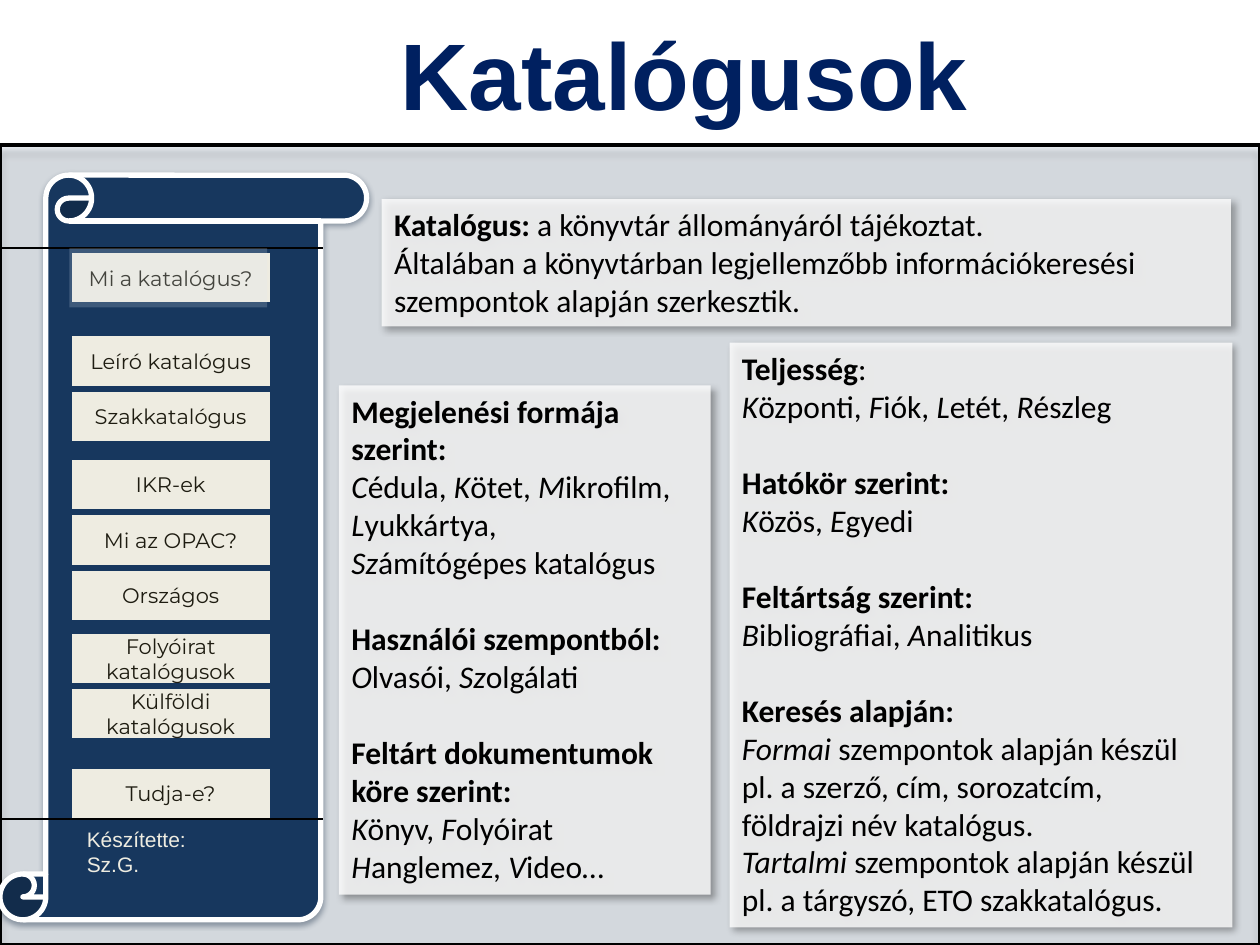
import pptx
import pptx.dml.color
import pptx.enum.dml
import pptx.enum.shapes
import pptx.enum.text
import pptx.oxml
import pptx.oxml.ns
import pptx.util
from lxml import etree

RGB = pptx.dml.color.RGBColor
SHAPE = pptx.enum.shapes.MSO_SHAPE
ALIGN = pptx.enum.text.PP_ALIGN
FIT = pptx.enum.text.MSO_AUTO_SIZE.SHAPE_TO_FIT_TEXT
Inches, Pt, qn = pptx.util.Inches, pptx.util.Pt, pptx.oxml.ns.qn

BLACK = RGB(0x00, 0x00, 0x00)
WHITE = RGB(0xFF, 0xFF, 0xFF)
OFF_WHITE = RGB(0xFE, 0xFE, 0xFE)
PALE_BLUE = RGB(0xDC, 0xE6, 0xF2)
TITLE_BLUE = RGB(0x00, 0x20, 0x60)
SCROLL_BLUE = RGB(0x17, 0x37, 0x5E)
SCROLL_SHADOW = RGB(0x0F, 0x24, 0x3E)
CREAM = RGB(0xEE, 0xEC, 0xE1)
MENU_INK = RGB(0x1E, 0x1C, 0x11)

TITLE = "Katalógusok"
AUTHOR = ["Készítette:", "Sz.G."]

# Menu groups: top of the first button, labels
MENU = [
    (2.01, ["Mi a katalógus?"]),
    (2.67, ["Leíró katalógus", "Szakkatalógus"]),
    (3.65, ["IKR-ek", "Mi az OPAC?", "Országos"]),
    (5.03, ["Folyóirat katalógusok", "Külföldi katalógusok"]),
    (6.10, ["Tudja-e?"]),
]
MENU_LEFT, MENU_STEP, BUTTON_W, BUTTON_H = 0.57, 0.44, 1.57, 0.39
RULES = [1.97, 6.5]
RULE_END = 2.56

# Panels: position, then sections of paragraphs; *bold*, _italic_
PANELS = [
    ((2.69, 3.06, 2.95, 4.04), [
        ["*Megjelenési formája*", "*szerint:*",
         "_C_édula, _K_ötet, _M_ikrofilm,", "_L_yukkártya,",
         "_Sz_ámítógépes katalógus"],
        ["*Használói szempontból:*", "_O_lvasói, _Sz_olgálati"],
        ["*Feltárt dokumentumok*", "*köre szerint:*",
         "_K_önyv, _F_olyóirat", "_H_anglemez, _V_ideo…"],
    ]),
    ((5.79, 2.72, 3.99, 4.64), [
        ["*Teljesség*:", "_K_özponti, _F_iók, _L_etét, _R_észleg"],
        ["*Hatókör szerint:*", "_K_özös, _E_gyedi"],
        ["*Feltártság szerint:*", "_B_ibliográfiai, _A_nalitikus"],
        ["*Keresés alapján:*",
         "_Formai _szempontok alapján készül",
         "pl. a szerző, cím, sorozatcím, \vföldrajzi név katalógus.",
         "_Tartalmi _szempontok alapján készül",
         "pl. a tárgyszó, ETO szakkatalógus."],
    ]),
    ((3.03, 1.58, 6.74, 1.01), [
        ["*Katalógus: *a könyvtár állományáról tájékoztat.",
         "Általában a könyvtárban legjellemzőbb információkeresési "
         "szempontok alapján szerkesztik."],
    ]),
]
SECTION_GAP = Pt(22)


def add_effects(shape, shadow=None):
    """Write the effect list; shadow is colour, opacity %, blur, distance, angle."""
    effects = etree.SubElement(shape._element.spPr, qn("a:effectLst"))
    if shadow:
        color, opacity, blur, distance, angle = shadow
        outer = etree.SubElement(
            effects, qn("a:outerShdw"), blurRad=str(Pt(blur)), dist=str(Pt(distance)),
            dir=str(angle * 60000), algn="tl", rotWithShape="0")
        tint = etree.SubElement(outer, qn("a:srgbClr"), val=str(color))
        etree.SubElement(tint, qn("a:alpha"), val=str(opacity * 1000))


def add_block(slide, kind, place, color, opacity=100, line=None, shadow=None):
    block = slide.shapes.add_shape(kind, *map(Inches, place))
    block.fill.solid()
    block.fill.fore_color.rgb = color
    if opacity < 100:
        tint = block._element.spPr.find(qn("a:solidFill"))[0]
        etree.SubElement(tint, qn("a:alpha"), val=str(opacity * 1000))
    if line:
        block.line.color.rgb, block.line.width = line
    else:
        block.line.fill.background()
    add_effects(block, shadow)
    return block


def style(font, name, size, color, bold=False, italic=False):
    font.name, font.size, font.bold, font.italic = name, Pt(size), bold, italic
    font.color.rgb = color


def outline(run, color, width):
    edge = etree.Element(qn("a:ln"), w=str(Pt(width)))
    fill = etree.SubElement(edge, qn("a:solidFill"))
    etree.SubElement(fill, qn("a:srgbClr"), val=str(color))
    run.font._element.insert(0, edge)


def add_outlined_text(slide, place, lines, size, color, edge, bold, align, wrap):
    frame = slide.shapes.add_textbox(*map(Inches, place)).text_frame
    frame.word_wrap = wrap
    frame.auto_size = FIT
    frame.text = "\n".join(lines)
    for paragraph in frame.paragraphs:
        paragraph.alignment = align
        for run in paragraph.runs:
            style(run.font, "Arial", size, color, bold)
            outline(run, *edge)


def write_marked(paragraph, text):
    """Turn *bold* and _italic_ marks into runs, and \\v into a line break."""
    for b, chunk in enumerate(text.split("*")):
        for i, piece in enumerate(chunk.split("_")):
            for n, part in enumerate(piece.split("\v")):
                if n:
                    paragraph.add_line_break()
                if part:
                    run = paragraph.add_run()
                    run.text = part
                    style(run.font, "Calibri", 18, BLACK, b % 2 == 1, i % 2 == 1)


def add_panel(slide, place, sections):
    panel = add_block(slide, SHAPE.RECTANGLE, place, WHITE, 80,
                      shadow=(BLACK, 40, 4, 3, 45))
    frame = panel.text_frame
    frame.word_wrap = True
    frame.auto_size = FIT
    frame.vertical_anchor = pptx.enum.text.MSO_ANCHOR.TOP
    for s, section in enumerate(sections):
        for n, text in enumerate(section):
            first = s == n == 0
            paragraph = frame.paragraphs[0] if first else frame.add_paragraph()
            paragraph.alignment = ALIGN.LEFT
            if s and not n:
                paragraph.space_before = SECTION_GAP
            write_marked(paragraph, text)


def add_button(slide, top, label):
    button = add_block(slide, SHAPE.ACTION_BUTTON_CUSTOM,
                       (MENU_LEFT, top, BUTTON_W, BUTTON_H), CREAM)
    frame = button.text_frame
    frame.word_wrap = True
    frame.vertical_anchor = pptx.enum.text.MSO_ANCHOR.MIDDLE
    frame.text = label
    frame.paragraphs[0].alignment = ALIGN.CENTER
    style(frame.paragraphs[0].runs[0].font, "Montserrat", 12, MENU_INK)


def main():
    deck = pptx.Presentation()
    deck.slide_width, deck.slide_height = Inches(10), Inches(7.5)
    slide = deck.slides.add_slide(deck.slide_layouts[6])

    add_block(slide, SHAPE.RECTANGLE, (0, 1.15, 10, 6.35), PALE_BLUE, 42,
              (BLACK, Pt(2)), (BLACK, 46, 4, 4, 90))
    add_outlined_text(slide, (2.03, 0.08, 6.8, 1.01), [TITLE], 54, TITLE_BLUE,
                      (OFF_WHITE, 1.5), True, ALIGN.CENTER, True)
    add_block(slide, SHAPE.VERTICAL_SCROLL, (0, 1.39, 2.91, 5.91), SCROLL_BLUE,
              line=(WHITE, Pt(3)), shadow=(SCROLL_SHADOW, 38, 3.1, 1.6, 90))
    for y in RULES:
        rule = slide.shapes.add_connector(
            pptx.enum.shapes.MSO_CONNECTOR.STRAIGHT,
            Inches(RULE_END), Inches(y), 0, Inches(y))
        rule.line.color.rgb, rule.line.width = BLACK, Pt(1.25)
        add_effects(rule)
    for top, labels in MENU:
        for row, label in enumerate(labels):
            add_button(slide, top + row * MENU_STEP, label)
    add_outlined_text(slide, (0.59, 6.51, 1.02, 0.5), AUTHOR, 12, CREAM,
                      (BLACK, 0.25), False, ALIGN.LEFT, False)
    add_block(slide, SHAPE.RECTANGLE, (0.55, 1.97, 1.57, 0.47), PALE_BLUE, 20)
    for place, sections in PANELS:
        add_panel(slide, place, sections)

    deck.save("out.pptx")


if __name__ == "__main__":
    main()
